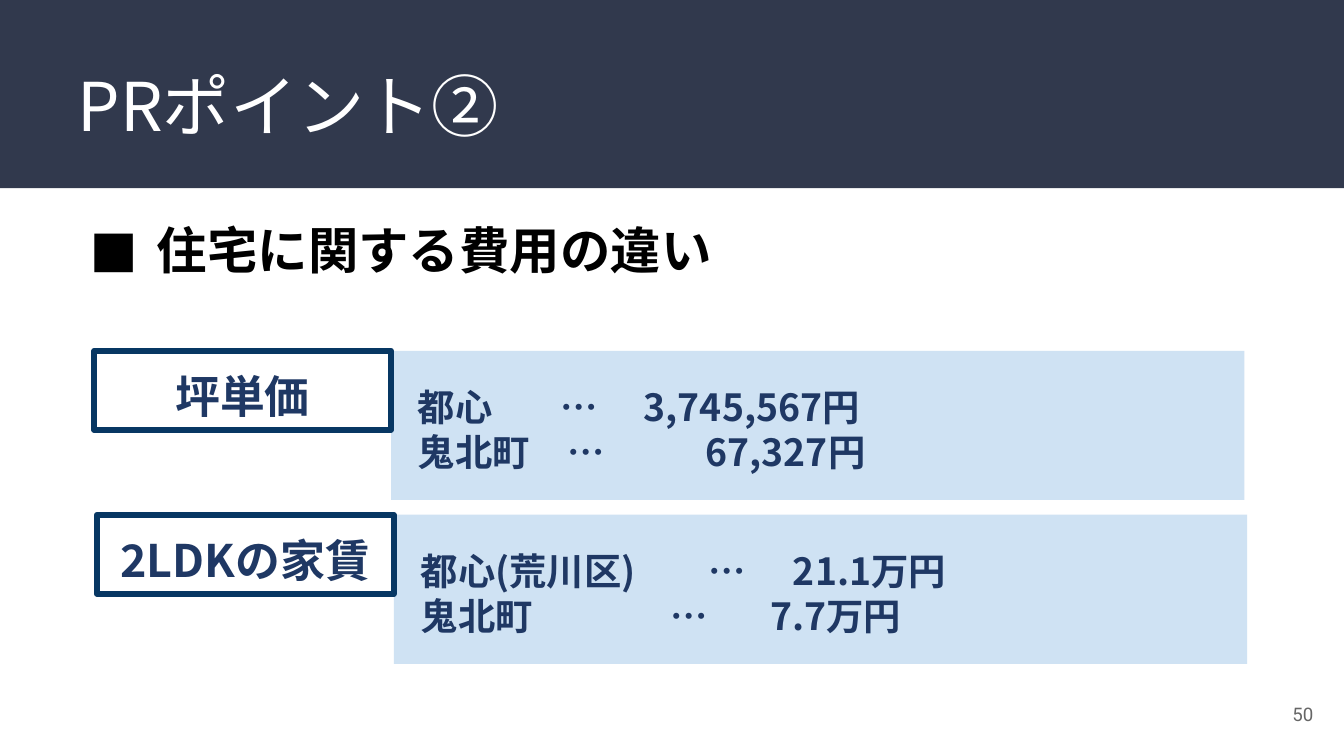
from dataclasses import dataclass

from lxml.etree import SubElement
from pptx import Presentation
from pptx.dml.color import RGBColor
from pptx.enum.shapes import MSO_SHAPE
from pptx.enum.text import MSO_ANCHOR as Anchor, PP_ALIGN as Align
from pptx.oxml.ns import qn
from pptx.util import Inches, Pt

WHITE = RGBColor(0xFF, 0xFF, 0xFF)
BLACK = RGBColor(0, 0, 0)
SLATE = RGBColor(0x31, 0x39, 0x4D)
GREY = RGBColor(0x66, 0x66, 0x66)
PALE_BLUE = RGBColor(0xCF, 0xE2, 0xF3)
NAVY = RGBColor(0x1F, 0x38, 0x64)
BORDER_BLUE = RGBColor(0x07, 0x37, 0x63)
JAPANESE = "Noto Sans CJK JP"
LATIN = "Roboto"

SLIDE_WIDTH = 10
SLIDE_HEIGHT = SLIDE_WIDTH * 9 / 16
LABEL_WIDTH, LABEL_HEIGHT = 2.21, 0.59
PANEL_WIDTH, PANEL_HEIGHT = 6.35, 1.11


@dataclass
class Price:
    place: str
    amount: str
    dots_at: float
    amount_at: float


@dataclass
class Comparison:
    label: str
    left: float
    top: float
    prices: list[Price]


COMPARISONS = [
    Comparison("坪単価", 0.70, 2.61, [
        Price("都心", "3,745,567円", 1.06, 1.68),
        Price("鬼北町", "67,327円", 1.11, 2.14),
    ]),
    Comparison("2LDKの家賃", 0.72, 3.83, [
        Price("都心(荒川区)", "21.1万円", 2.14, 2.77),
        Price("鬼北町", "7.7万円", 1.86, 2.60),
    ]),
]


def write(shape, *lines: str, size: float, color: RGBColor, font: str = JAPANESE,
          bold: bool = False, align: Align = Align.LEFT, anchor: Anchor = Anchor.TOP,
          insets: tuple = (0.1, 0.1, 0.1, 0.1), bullet: str = "",
          tab_stops: tuple = ()) -> None:
    """Fill a shape with one paragraph per line; tab_stops holds the inches for each line."""
    frame = shape.text_frame
    frame.word_wrap = True
    frame.vertical_anchor = anchor
    (frame.margin_left, frame.margin_top,
     frame.margin_right, frame.margin_bottom) = map(Inches, insets)
    for index, line in enumerate(lines):
        paragraph = frame.add_paragraph() if index else frame.paragraphs[0]
        paragraph.alignment = align
        properties = paragraph._p.get_or_add_pPr()
        if bullet:
            properties.set("marL", str(Inches(0.5)))
            properties.set("indent", str(-Inches(0.5)))
            bullet_color = SubElement(properties, qn("a:buClr"))
            SubElement(bullet_color, qn("a:srgbClr"), val=str(color))
            SubElement(properties, qn("a:buFont"), typeface=LATIN)
            SubElement(properties, qn("a:buChar"), char=bullet)
        if tab_stops:
            tabs = SubElement(properties, qn("a:tabLst"))
            for stop in tab_stops[index]:
                SubElement(tabs, qn("a:tab"), pos=str(Inches(stop)), algn="l")
        run = paragraph.add_run()
        run.text = line
        run.font.size = Pt(size)
        run.font.bold = bold
        run.font.name = font
        run.font.color.rgb = color
        SubElement(run._r.get_or_add_rPr(), qn("a:ea"), typeface=font)


def add_rectangle(slide, left: float, top: float, width: float, height: float,
                  fill: RGBColor | None = None, border: RGBColor | None = None):
    rectangle = slide.shapes.add_shape(
        MSO_SHAPE.RECTANGLE, *map(Inches, (left, top, width, height)))
    rectangle.shadow.inherit = False
    if fill is None:
        rectangle.fill.background()
    else:
        rectangle.fill.solid()
        rectangle.fill.fore_color.rgb = fill
    if border is None:
        rectangle.line.fill.background()
    else:
        rectangle.line.color.rgb = border
        rectangle.line.width = Pt(3)
    return rectangle


def add_text_box(slide, left: float, top: float, width: float, height: float):
    return slide.shapes.add_textbox(*map(Inches, (left, top, width, height)))


def add_comparison(slide, item: Comparison) -> None:
    panel = add_rectangle(slide, item.left + LABEL_WIDTH, item.top,
                          PANEL_WIDTH, PANEL_HEIGHT, fill=PALE_BLUE)
    write(panel, *(f"{price.place}\t…\t{price.amount}" for price in item.prices),
          size=20, color=NAVY, bold=True, anchor=Anchor.MIDDLE,
          insets=(0.2, 0.09, 0.07, 0.04),
          tab_stops=tuple((price.dots_at, price.amount_at) for price in item.prices))
    label = add_rectangle(slide, item.left, item.top, LABEL_WIDTH, LABEL_HEIGHT,
                          border=BORDER_BLUE)
    write(label, item.label, size=24, color=NAVY, bold=True, align=Align.CENTER,
          anchor=Anchor.MIDDLE, insets=(0.07, 0.12, 0.07, 0.04))


def main() -> None:
    presentation = Presentation()
    presentation.slide_width = Inches(SLIDE_WIDTH)
    presentation.slide_height = Inches(SLIDE_HEIGHT)
    slide = presentation.slides.add_slide(presentation.slide_layouts[6])

    add_rectangle(slide, 0, 0, SLIDE_WIDTH, 1.4, fill=SLATE)
    write(add_text_box(slide, 0.48, 0.38, 9.18, 0.97), "PRポイント②",
          size=36, color=WHITE)
    write(add_text_box(slide, 9.27, 5.1, 0.6, 0.43), "50", size=10, color=GREY,
          font=LATIN, align=Align.RIGHT, anchor=Anchor.MIDDLE)
    write(add_text_box(slide, 0.57, 1.53, 8.87, 0.64), "住宅に関する費用の違い",
          size=27, color=BLACK, bold=True, bullet="■")
    for item in COMPARISONS:
        add_comparison(slide, item)

    presentation.save("out.pptx")


if __name__ == "__main__":
    main()
